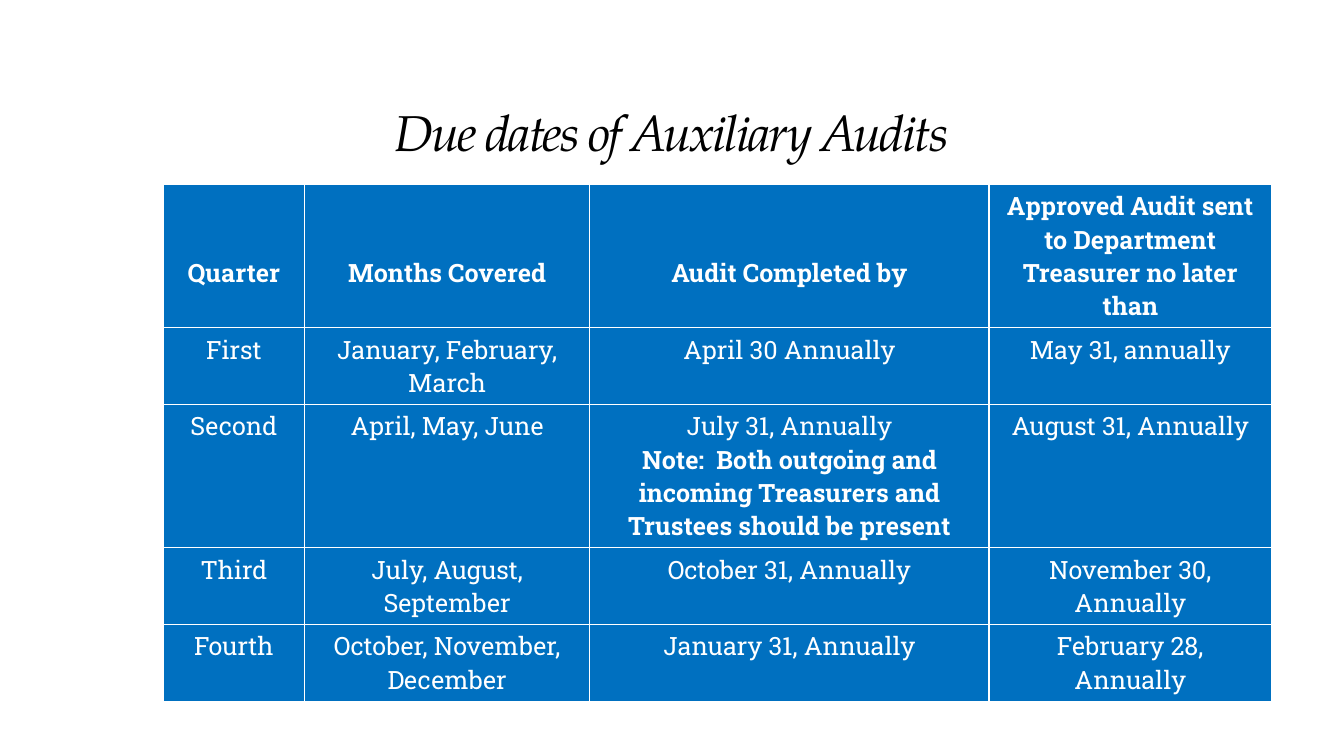
from dataclasses import dataclass

from pptx import Presentation
from pptx import util as u
from pptx.dml import color
from pptx.enum import text

COLORS = {"table": "0070C0", "cell_text": "FFFFFF", "title": "000000"}
TITLE_FONT = {"name": "TeX Gyre Pagella", "size": u.Pt(36), "italic": True, "bold": False}
CELL_FONT = {"name": "Roboto Slab", "size": u.Pt(18)}
TITLE_BOX = {"left": 0.88, "top": 0.87, "width": 11.57, "height": 0.96}
TITLE_INSET = 0.25
TABLE_LEFT, TABLE_TOP = 1.62, 1.83
COLUMN_WIDTHS = (1.4, 2.83, 3.96, 2.8)
LINE_HEIGHT = 0.33
CELL_INSET = 0.05


@dataclass
class Quarter:
    name: str
    months: str
    completed: str
    sent: str
    lines: int = 2
    note: str = ""


HEADINGS = (
    "Quarter",
    "Months Covered",
    "Audit Completed by",
    "Approved Audit sent to Department Treasurer no later than",
)
HEADING_LINES = 4
HEADING_LINES_ABOVE = (2, 2, 2, 0)
QUARTERS = [
    Quarter("First", "January, February, March", "April 30 Annually", "May 31, annually"),
    Quarter("Second", "April, May, June", "July 31, Annually", "August 31, Annually", 4,
            "Note:  Both outgoing and incoming Treasurers and Trustees should be present"),
    Quarter("Third", "July, August, September", "October 31, Annually",
            "November 30, Annually"),
    Quarter("Fourth", "October, November, December", "January 31, Annually",
            "February 28, Annually"),
]


def format_font(font, values: dict, color_name: str) -> None:
    for name, value in values.items():
        setattr(font, name, value)
    font.color.rgb = color.RGBColor.from_string(COLORS[color_name])


def add_title(page, wording: str) -> None:
    title = page.shapes.title
    for name, value in TITLE_BOX.items():
        setattr(title, name, u.Inches(value))
    frame = title.text_frame
    frame.auto_size = text.MSO_AUTO_SIZE.NONE
    frame.word_wrap = True
    frame.vertical_anchor = text.MSO_ANCHOR.MIDDLE
    for side in ("left", "top", "right", "bottom"):
        setattr(frame, f"margin_{side}", u.Inches(TITLE_INSET))
    para = frame.paragraphs[0]
    para.alignment = text.PP_ALIGN.CENTER
    para.line_spacing = 0.85
    span = para.add_run()
    span.text = wording
    format_font(span.font, TITLE_FONT, "title")
    span.font._element.set("spc", "-150")


def add_cell_para(para, wording: str, bold: bool) -> None:
    para.alignment = text.PP_ALIGN.CENTER
    span = para.add_run()
    span.text = wording
    format_font(span.font, {**CELL_FONT, "bold": bold}, "cell_text")


def fill_cell(cell, wording: str, bold: bool = False, lines_above: int = 0) -> None:
    """Fill a cell, its wording lowered by a number of text lines."""
    cell.fill.solid()
    cell.fill.fore_color.rgb = color.RGBColor.from_string(COLORS["table"])
    cell.margin_top = u.Inches(CELL_INSET + lines_above * LINE_HEIGHT)
    add_cell_para(cell.text_frame.paragraphs[0], wording, bold)


def add_audit_table(page) -> None:
    line_counts = [HEADING_LINES] + [quarter.lines for quarter in QUARTERS]
    heights = [count * LINE_HEIGHT + 2 * CELL_INSET for count in line_counts]
    table = page.shapes.add_table(
        len(heights), len(COLUMN_WIDTHS), u.Inches(TABLE_LEFT), u.Inches(TABLE_TOP),
        u.Inches(sum(COLUMN_WIDTHS)), u.Inches(sum(heights))).table
    table.horz_banding = False
    for column, width in zip(table.columns, COLUMN_WIDTHS):
        column.width = u.Inches(width)
    for row, height in zip(table.rows, heights):
        row.height = u.Inches(height)

    for index, (heading, above) in enumerate(zip(HEADINGS, HEADING_LINES_ABOVE)):
        fill_cell(table.cell(0, index), heading, True, above)
    for row_index, quarter in enumerate(QUARTERS, start=1):
        wordings = (quarter.name, quarter.months, quarter.completed, quarter.sent)
        for index, wording in enumerate(wordings):
            fill_cell(table.cell(row_index, index), wording)
        if quarter.note:
            completed_cell = table.cell(row_index, HEADINGS.index("Audit Completed by"))
            add_cell_para(completed_cell.text_frame.add_paragraph(), quarter.note, True)


def main() -> None:
    deck = Presentation()
    deck.slide_width, deck.slide_height = u.Inches(13.33), u.Inches(7.5)
    page = deck.slides.add_slide(deck.slide_layouts.get_by_name("Title Only"))
    add_title(page, "Due dates of Auxiliary Audits")
    add_audit_table(page)
    deck.save("out.pptx")


if __name__ == "__main__":
    main()
